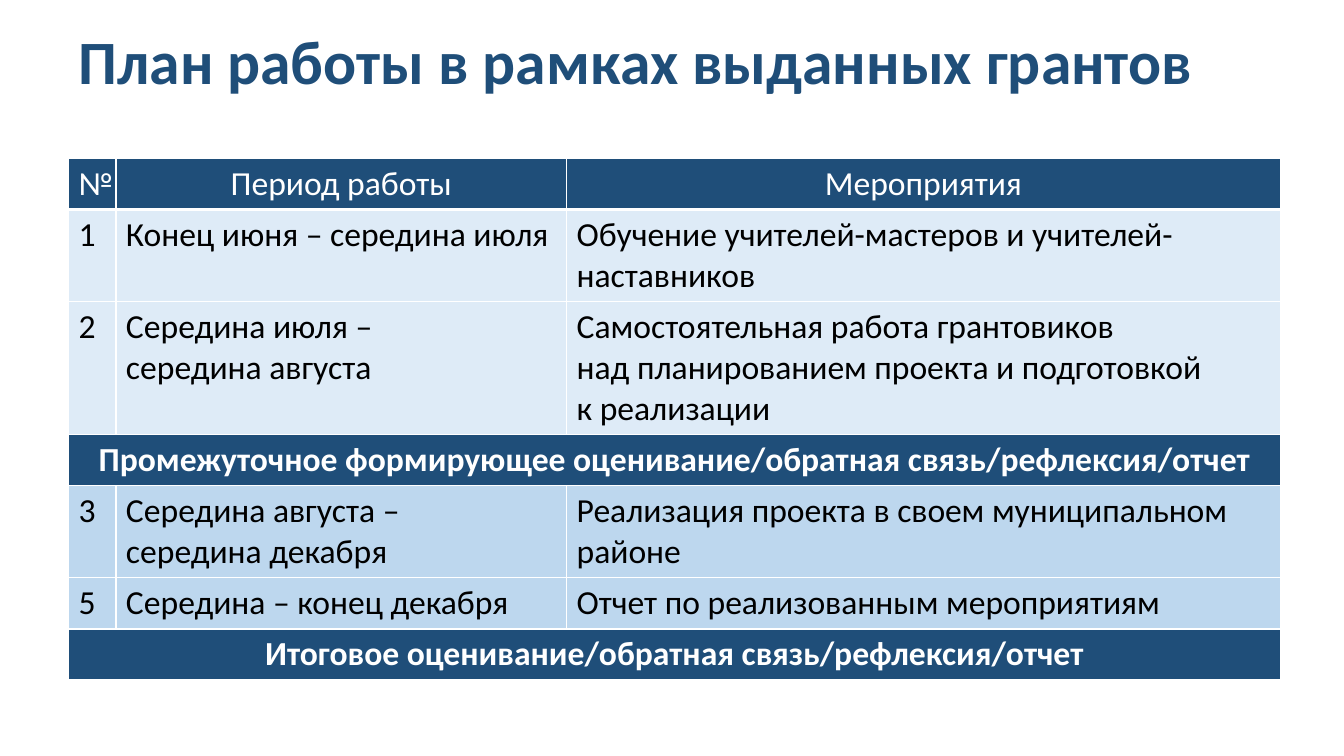
from dataclasses import dataclass

from lxml.etree import SubElement
from pptx import Presentation
from pptx.dml.color import RGBColor
from pptx.enum.text import MSO_ANCHOR, PP_ALIGN
from pptx.oxml.ns import qn
from pptx.table import Table, _Cell
from pptx.text.text import _Paragraph
from pptx.util import Inches, Pt

COLORS = {
    "navy": "1F4E79",
    "pale": "DEEBF7",
    "light": "BDD7EE",
    "white": "FFFFFF",
    "black": "000000",
}
FONT = "Calibri"
COLUMN_WIDTHS = (0.47, 4.47, 7.08)
ROW_HEIGHT = 0.41
LEFT, WIDTH = Inches(0.68), Inches(12.02)


@dataclass
class PlanRow:
    texts: tuple[str, ...]
    fill: str
    header: bool = False

    @property
    def banner(self) -> bool:
        return len(self.texts) == 1


PLAN = (
    PlanRow(("№", "Период работы", "Мероприятия"), "navy", header=True),
    PlanRow(("1", "Конец июня – середина июля",
             "Обучение учителей-мастеров и учителей-наставников"), "pale"),
    PlanRow(("2", "Середина июля – \vсередина августа",
             "Самостоятельная работа грантовиков \v"
             "над планированием проекта и подготовкой \vк реализации"), "pale"),
    PlanRow(("Промежуточное формирующее оценивание/обратная связь/рефлексия/отчет",), "navy"),
    PlanRow(("3", "Середина августа – \vсередина декабря",
             "Реализация проекта в своем муниципальном районе"), "light"),
    PlanRow(("5", "Середина – конец декабря", "Отчет по реализованным мероприятиям"), "light"),
    PlanRow(("Итоговое оценивание/обратная связь/рефлексия/отчет",), "navy"),
)


def color(name: str) -> RGBColor:
    return RGBColor.from_string(COLORS[name])


def format_paragraph(paragraph: _Paragraph, size: int, color_name: str,
                     bold: bool, alignment: PP_ALIGN) -> None:
    paragraph.alignment = alignment
    paragraph.font.name = FONT
    paragraph.font.size = Pt(size)
    paragraph.font.bold = bold
    paragraph.font.color.rgb = color(color_name)


def format_cell(cell: _Cell, fill: str, top: int, bottom: int) -> None:
    properties = cell._tc.get_or_add_tcPr()
    for side, points in (("L", 1), ("R", 1), ("T", top), ("B", bottom)):
        line = SubElement(properties, qn(f"a:ln{side}"), w=str(Pt(points)))
        SubElement(SubElement(line, qn("a:solidFill")), qn("a:srgbClr"), val=COLORS["white"])
    cell.fill.solid()
    cell.fill.fore_color.rgb = color(fill)


def fill_row(table: Table, index: int, row: PlanRow) -> None:
    table.rows[index].height = Inches(ROW_HEIGHT)
    cells = list(table.rows[index].cells)
    for cell in cells:
        format_cell(cell, row.fill, 3 if index == 1 else 1, 3 if row.header else 1)
    if row.banner:
        cells[0].merge(cells[-1])
    for column, (cell, text) in enumerate(zip(cells, row.texts)):
        cell.text = text
        centered = row.banner or (row.header and column > 0)
        format_paragraph(cell.text_frame.paragraphs[0], 24,
                         "white" if row.fill == "navy" else "black", row.banner,
                         PP_ALIGN.CENTER if centered else PP_ALIGN.LEFT)


def main() -> None:
    presentation = Presentation()
    presentation.slide_width, presentation.slide_height = Inches(13.33), Inches(7.5)
    slide = presentation.slides.add_slide(presentation.slide_layouts[5])

    title = slide.shapes.title
    title.left, title.top, title.width, title.height = LEFT, Inches(0), WIDTH, Inches(1.29)
    title.text = "План работы в рамках выданных грантов"
    title.text_frame.vertical_anchor = MSO_ANCHOR.MIDDLE
    title_paragraph = title.text_frame.paragraphs[0]
    title_paragraph.line_spacing = 0.9
    format_paragraph(title_paragraph, 44, "navy", True, PP_ALIGN.LEFT)

    frame = slide.shapes.add_table(len(PLAN), len(COLUMN_WIDTHS), LEFT, Inches(1.57),
                                   WIDTH, Inches(ROW_HEIGHT * len(PLAN)))
    table = frame.table
    for column, width in zip(table.columns, COLUMN_WIDTHS):
        column.width = Inches(width)
    for index, row in enumerate(PLAN):
        fill_row(table, index, row)
    frame.height = Inches(5.1)

    presentation.save("out.pptx")


if __name__ == "__main__":
    main()
